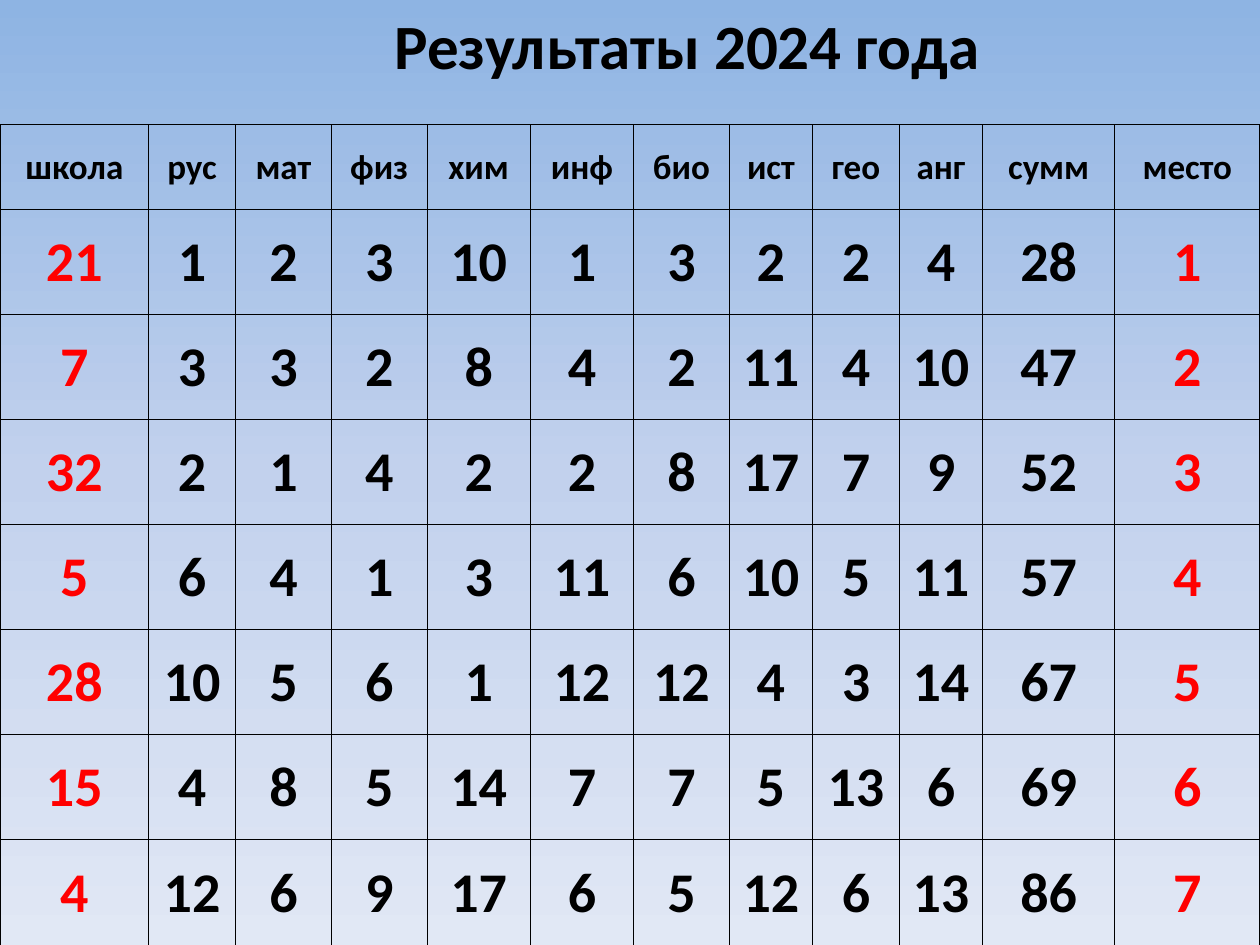
from copy import deepcopy
from dataclasses import dataclass

from lxml.etree import SubElement
from pptx import Presentation
from pptx.dml.color import RGBColor
from pptx.enum.text import MSO_ANCHOR, MSO_AUTO_SIZE, PP_ALIGN
from pptx.oxml.ns import qn
from pptx.util import Inches, Pt


@dataclass(frozen=True)
class Theme:
    """Colours, font and type sizes of the slide."""
    font: str = "Calibri"
    ink: str = "000000"
    mark: str = "FF0000"
    sky: tuple = ((0, "8EB4E3"), (0.5, "C2D1ED"), (1, "E1E8F5"))
    title: int = 36
    head: int = 20
    body: int = 32
    rule: float = 0.5


THEME = Theme()
HEADS = "школа рус мат физ хим инф био ист гео анг сумм место".split()
RANKS = (
    (21, 1, 2, 3, 10, 1, 3, 2, 2, 4, 28, 1),
    (7, 3, 3, 2, 8, 4, 2, 11, 4, 10, 47, 2),
    (32, 2, 1, 4, 2, 2, 8, 17, 7, 9, 52, 3),
    (5, 6, 4, 1, 3, 11, 6, 10, 5, 11, 57, 4),
    (28, 10, 5, 6, 1, 12, 12, 4, 3, 14, 67, 5),
    (15, 4, 8, 5, 14, 7, 7, 5, 13, 6, 69, 6),
    (4, 12, 6, 9, 17, 6, 5, 12, 6, 13, 86, 7),
)
WIDTHS = (1.18, 0.69, 0.76, 0.76, 0.82, 0.82, 0.76, 0.66, 0.69, 0.66, 1.05, 1.15)
TOP, TALL, HEAD = 0.99, 6.51, 0.67
CELL = {
    "vertical_anchor": MSO_ANCHOR.MIDDLE,
    "margin_left": Inches(0.01),
    "margin_right": Inches(0.01),
    "margin_top": Inches(0.01),
    "margin_bottom": 0,
}


def apply(item, values):
    """Set each attribute named in a dict of format values."""
    for name, value in values.items():
        setattr(item, name, value)


def write(frame, text, size, tint=THEME.ink, align=None):
    """Write one bold line of text into a text frame."""
    line = frame.paragraphs[0]
    line.alignment = align
    run = line.add_run()
    run.text = str(text)
    apply(run.font, {"name": THEME.font, "size": Pt(size), "bold": True})
    run.font.color.rgb = RGBColor.from_string(tint)


def paint(slide):
    """Fill the background with a downward gradient."""
    fill = slide.background.fill
    fill.gradient()
    fill.gradient_angle = 270
    stops = slide.element.find(".//" + qn("a:gsLst"))
    stops.insert(1, deepcopy(stops[0]))
    for stop, (place, tint) in zip(fill.gradient_stops, THEME.sky):
        stop.position = place
        stop.color.rgb = RGBColor.from_string(tint)


def frame_cell(cell):
    """Clear the cell fill and rule all four sides."""
    cell.fill.background()
    props = cell._tc.get_or_add_tcPr()
    for spot, side in enumerate(("lnL", "lnR", "lnT", "lnB")):
        line = props.makeelement(qn("a:" + side), {"w": str(Pt(THEME.rule))})
        fill = SubElement(line, qn("a:solidFill"))
        SubElement(fill, qn("a:srgbClr"), val=THEME.ink)
        props.insert(spot, line)


def add_grid(slide):
    """Add the table of school ranks."""
    rows = (HEADS, *RANKS)
    grid = slide.shapes.add_table(
        len(rows), len(HEADS), 0, Inches(TOP), Inches(sum(WIDTHS)), Inches(TALL)
    ).table
    apply(grid, {"first_row": False, "horz_banding": False})
    for col, width in zip(grid.columns, WIDTHS):
        col.width = Inches(width)
    for i, row in enumerate(rows):
        grid.rows[i].height = Inches((TALL - HEAD) / len(RANKS) if i else HEAD)
        for j, text in enumerate(row):
            cell = grid.cell(i, j)
            apply(cell, CELL)
            frame_cell(cell)
            edge = i > 0 and j in (0, len(row) - 1)
            write(
                cell.text_frame,
                text,
                THEME.body if i else THEME.head,
                THEME.mark if edge else THEME.ink,
                PP_ALIGN.CENTER,
            )


def add_title(slide):
    """Add the heading above the table."""
    box = slide.shapes.add_textbox(Inches(3.03), 0, Inches(4.88), Inches(0.71))
    frame = box.text_frame
    apply(frame, {"word_wrap": False, "auto_size": MSO_AUTO_SIZE.SHAPE_TO_FIT_TEXT})
    write(frame, "Результаты 2024 года", THEME.title)


def main():
    """Build the slide and save it."""
    deck = Presentation()
    apply(deck, {"slide_width": Inches(10), "slide_height": Inches(7.5)})
    slide = deck.slides.add_slide(deck.slide_layouts[6])
    paint(slide)
    add_grid(slide)
    add_title(slide)
    deck.save("out.pptx")


if __name__ == "__main__":
    main()
